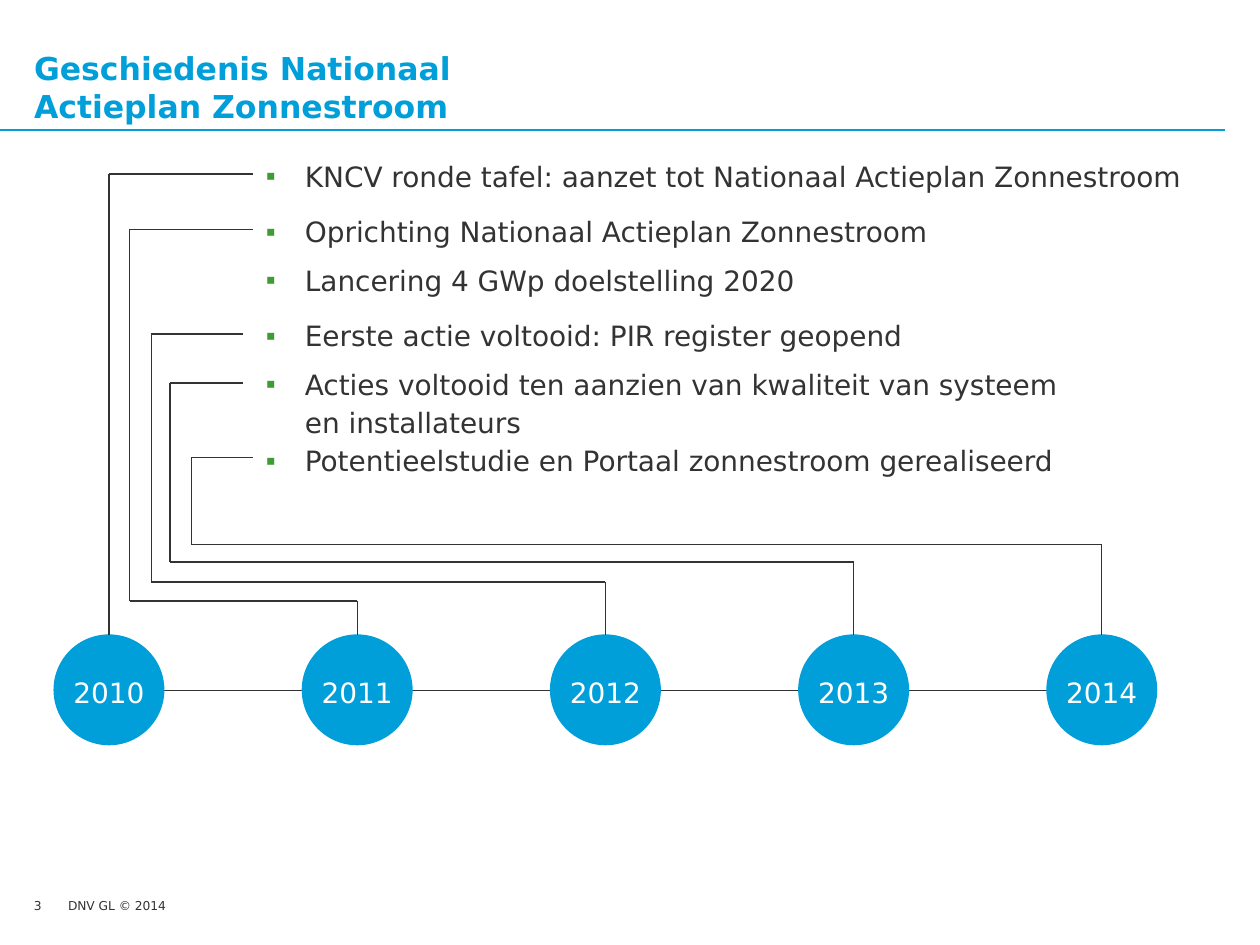
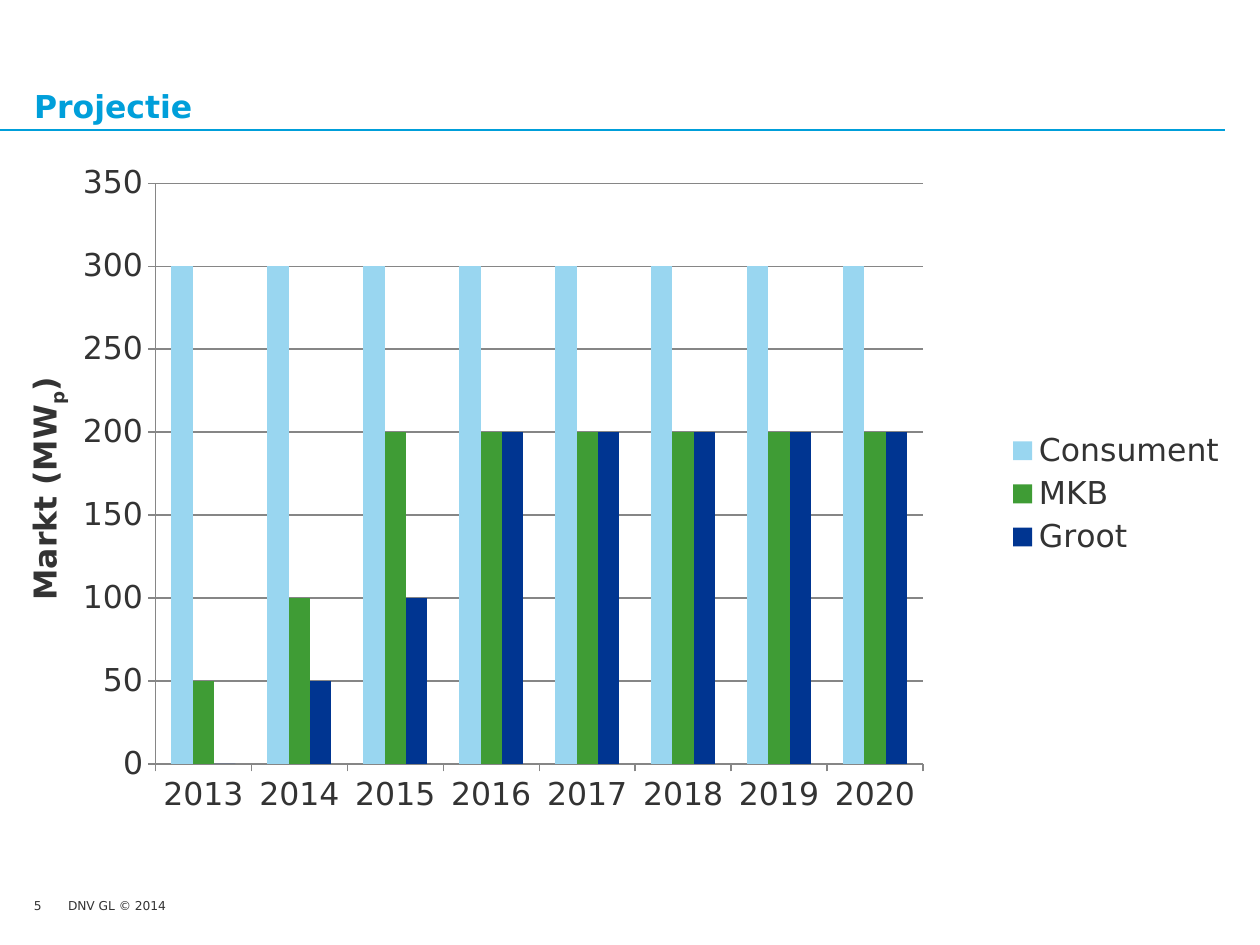
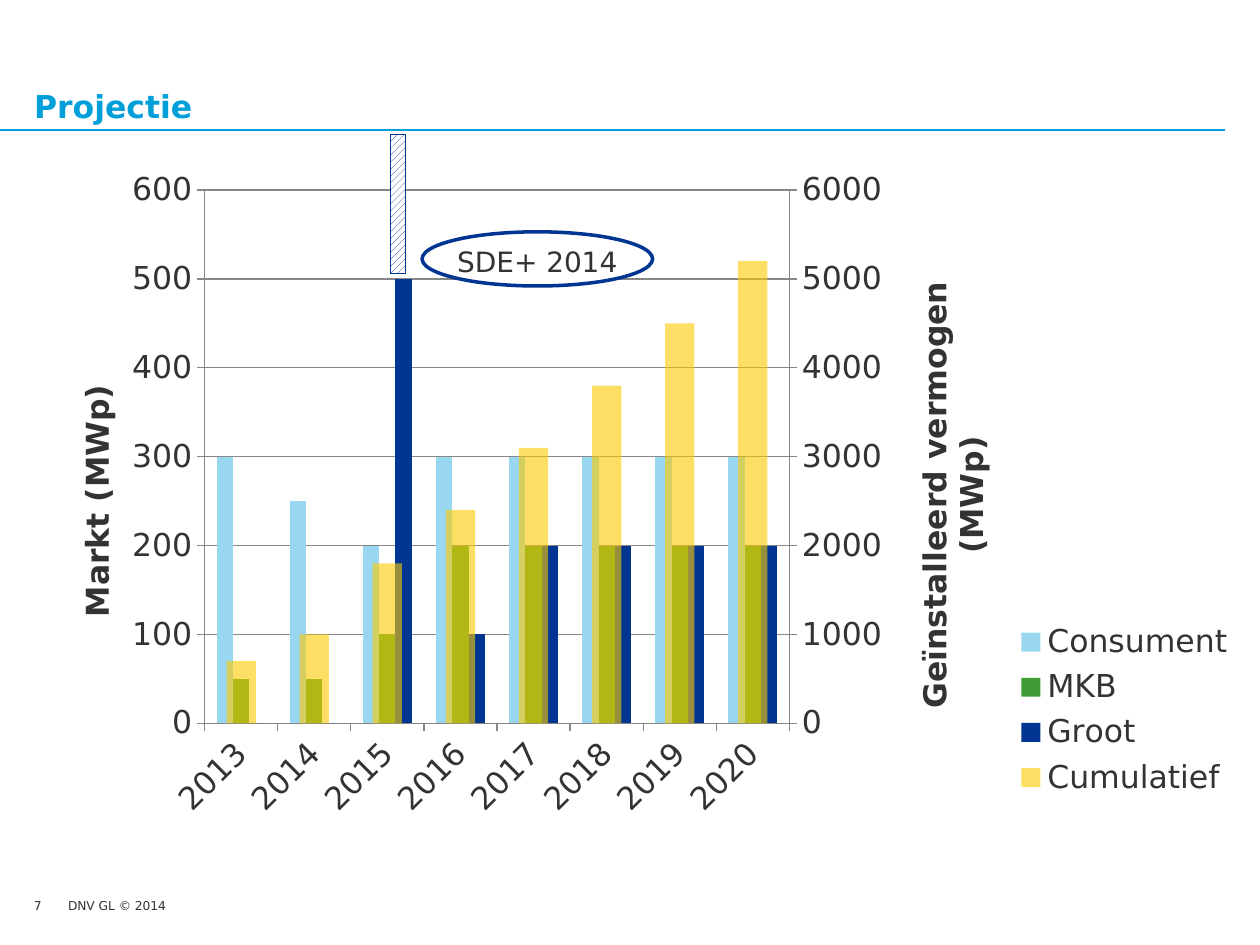
from copy import deepcopy

from lxml import etree
from pptx import Presentation
from pptx.chart.axis import ValueAxis
from pptx.chart.data import CategoryChartData
from pptx.dml.color import RGBColor
from pptx.enum.chart import XL_CHART_TYPE, XL_LEGEND_POSITION, XL_TICK_MARK
from pptx.enum.dml import MSO_PATTERN
from pptx.enum.shapes import MSO_CONNECTOR, MSO_SHAPE
from pptx.enum.text import MSO_ANCHOR, MSO_AUTO_SIZE, PP_ALIGN
from pptx.oxml.ns import qn
from pptx.util import Inches, Pt

COLUMNS = XL_CHART_TYPE.COLUMN_CLUSTERED
LEGEND_RIGHT = XL_LEGEND_POSITION.RIGHT
TICK_OUT, TICK_NONE = XL_TICK_MARK.OUTSIDE, XL_TICK_MARK.NONE
UP_DIAGONAL = MSO_PATTERN.WIDE_UPWARD_DIAGONAL
STRAIGHT = MSO_CONNECTOR.STRAIGHT
OVAL, RECTANGLE = MSO_SHAPE.OVAL, MSO_SHAPE.RECTANGLE
TOP, MIDDLE, BOTTOM = MSO_ANCHOR.TOP, MSO_ANCHOR.MIDDLE, MSO_ANCHOR.BOTTOM
NO_AUTOFIT = MSO_AUTO_SIZE.NONE
LEFT, CENTER = PP_ALIGN.LEFT, PP_ALIGN.CENTER

FONT = "DejaVu Sans"
LINE_SPACING = 1.13
COLORS = {
    "text": "333333", "white": "FFFFFF", "sky": "009FDA", "light": "99D6F0",
    "green": "3F9C35", "navy": "003591", "yellow": "FECB00", "axis": "868686",
}
YEARS = [str(year) for year in range(2013, 2021)]
SERIES_COLORS = ["light", "green", "navy", "yellow"]

DOT_SIZE, DOT_LEFT, DOT_TOP, DOT_STEP = 0.87, 0.43, 5.04, 1.97
MILESTONES = [
    ("2010", None, None, 1.38, 2.01),
    ("2011", 1.03, 4.77, 1.82, 2.01),
    ("2012", 1.2, 4.62, 2.65, 1.93),
    ("2013", 1.35, 4.46, 3.04, 1.93),
    ("2014", 1.52, 4.32, 3.63, 2.01),
]
EVENTS = [
    (0, "KNCV ronde tafel: aanzet tot Nationaal Actieplan Zonnestroom"),
    (10, "Oprichting Nationaal Actieplan Zonnestroom"),
    (6, "Lancering 4 GWp doelstelling 2020"),
    (10, "Eerste actie voltooid: PIR register geopend"),
    (6, "Acties voltooid ten aanzien van kwaliteit van systeem\nen installateurs"),
    (0.5, "Potentieelstudie en Portaal zonnestroom gerealiseerd"),
]


def color(name):
    """Return the named colour."""
    return RGBColor.from_string(COLORS[name])


def style_font(font, size, name="text", bold=False):
    """Set typeface, size, colour and weight of a font."""
    font.name, font.size, font.bold = FONT, Pt(size), bold
    font.color.rgb = color(name)


def add_text(para, text, size, name="text", bold=False):
    """Add text to a paragraph, one run for each line."""
    for index, line in enumerate(text.split("\n")):
        if index:
            para.add_line_break()
        span = para.add_run()
        span.text = line
        style_font(span.font, size, name, bold)


def prepare_frame(box, anchor=TOP, wrap=True):
    """Clear the margins of a text frame and return it."""
    frame = box.text_frame
    frame.margin_left = frame.margin_right = 0
    frame.margin_top = frame.margin_bottom = 0
    frame.vertical_anchor = anchor
    frame.auto_size = NO_AUTOFIT
    frame.word_wrap = wrap
    return frame


def move(box, left, top, width, height):
    """Place a shape on the page."""
    box.left, box.top = Inches(left), Inches(top)
    box.width, box.height = Inches(width), Inches(height)


def add_label(page, text, left, width):
    """Add a small footer label."""
    box = page.shapes.add_textbox(Inches(left), Inches(7.13), Inches(width), Inches(0.2))
    add_text(prepare_frame(box).paragraphs[0], text, 7)


def add_line(page, start, end, name="text", width=0.75):
    """Draw a straight line between two points."""
    line = page.shapes.add_connector(STRAIGHT, *(Inches(value) for value in start + end))
    line.line.color.rgb = color(name)
    line.line.width = Pt(width)
    etree.SubElement(line._element.spPr, qn("a:effectLst"))
    return line


def add_page(deck, layout, title, number):
    """Add a page with title, rule and footer."""
    page = deck.slides.add_slide(deck.slide_layouts[layout])
    add_label(page, "DNV GL © 2014", 0.54, 0.8)
    add_line(page, (0, 1.03), (9.72, 1.03), "sky", 1)
    move(page.shapes.title, 0.27, 0.26, 9.45, 0.73)
    para = prepare_frame(page.shapes.title, BOTTOM).paragraphs[0]
    para.alignment = LEFT
    add_text(para, title, 18, "sky", True)
    add_label(page, number, 0.27, 0.26)
    return page


def add_ellipse(page, text, place, fill, line, width, ink):
    """Add an ellipse with centred text."""
    shape = page.shapes.add_shape(OVAL, *(Inches(value) for value in place))
    shape.shadow.inherit = False
    shape.fill.solid()
    shape.fill.fore_color.rgb = color(fill)
    shape.line.color.rgb = color(line)
    shape.line.width = Pt(width)
    para = prepare_frame(shape, MIDDLE, False).paragraphs[0]
    para.alignment = CENTER
    para.line_spacing = LINE_SPACING
    add_text(para, text, 16, ink)
    return shape


def add_bullet(para):
    """Give a paragraph a green square bullet and a hanging indent."""
    props = para._p.get_or_add_pPr()
    props.set("marL", str(Inches(0.31)))
    props.set("indent", str(-Inches(0.31)))
    tint = etree.SubElement(props, qn("a:buClr"))
    etree.SubElement(tint, qn("a:srgbClr"), val=COLORS["green"])
    etree.SubElement(props, qn("a:buChar"), char="▪")


def fill_events(body):
    """Write the list of events."""
    move(body, 2.11, 1.23, 7.53, 2.6)
    frame = prepare_frame(body)
    for index, (space, text) in enumerate(EVENTS):
        para = frame.add_paragraph() if index else frame.paragraphs[0]
        add_bullet(para)
        para.alignment = LEFT
        para.line_spacing = LINE_SPACING
        para.space_before = Pt(space)
        add_text(para, text, 16)


def add_route(page, dot, center, trunk, lane, event_y, event_x):
    """Lead a line from a year to its event."""
    points = [(trunk or center, event_y), (event_x, event_y)]
    if lane:
        points = [(center, lane), (trunk, lane)] + points
    add_line(page, (center, DOT_TOP), points[0]).begin_connect(dot, 0)
    for start, end in zip(points, points[1:]):
        add_line(page, start, end)


def add_timeline(page):
    """Draw the years and their routes to the events."""
    add_line(page, (0.54, 5.48), (9.17, 5.48))
    for index, (year, *route) in enumerate(MILESTONES):
        left = DOT_LEFT + index * DOT_STEP
        place = (left, DOT_TOP, DOT_SIZE, DOT_SIZE)
        dot = add_ellipse(page, year, place, "sky", "sky", 0.75, "white")
        add_route(page, dot, left + DOT_SIZE / 2, *route)


def set_layout(parent, index, inner=False, **lengths):
    """Place a chart part by fractions of the chart area."""
    for old in parent.findall(qn("c:layout")):
        parent.remove(old)
    layout = etree.Element(qn("c:layout"))
    manual = etree.SubElement(layout, qn("c:manualLayout"))
    if inner:
        etree.SubElement(manual, qn("c:layoutTarget"), val="inner")
    for side in ("xMode", "yMode"):
        etree.SubElement(manual, qn("c:" + side), val="edge")
    for side, length in lengths.items():
        etree.SubElement(manual, qn("c:" + side), val=str(length))
    parent.insert(index, layout)


def style_axis(axis):
    """Set line and tick marks of an axis."""
    axis.format.line.color.rgb = color("axis")
    axis.format.line.width = Pt(0.75)
    axis.major_tick_mark = TICK_OUT
    axis.minor_tick_mark = TICK_NONE
    style_font(axis.tick_labels.font, 18)


def style_value_axis(axis, step, top, lines, place=None):
    """Set scale and upright title of a value axis."""
    style_axis(axis)
    axis.minimum_scale, axis.maximum_scale, axis.major_unit = 0, top, step
    frame = axis.axis_title.text_frame
    frame._txBody.bodyPr.set("rot", "-5400000")
    frame._txBody.bodyPr.set("vert", "horz")
    for index, spans in enumerate(lines):
        para = frame.add_paragraph() if index else frame.paragraphs[0]
        for span in spans:
            add_text(para, span, 18, bold=True)
    if place:
        set_layout(axis.axis_title._element, 1, x=place[0], y=place[1])


def add_market_chart(page, left, series):
    """Add a clustered column chart of the market per year."""
    data = CategoryChartData()
    data.categories = YEARS
    for name, values in series:
        data.add_series(name, values)
    frame = page.shapes.add_chart(
        COLUMNS, Inches(left), Inches(1.24), Inches(9.67), Inches(5.36), data)
    chart = frame.chart
    chart.has_title = False
    style_font(chart.font, 18)
    chart.has_legend = True
    chart.legend.position = LEGEND_RIGHT
    chart.legend.include_in_layout = False
    style_font(chart.legend.font, 18)
    plot = chart.plots[0]
    plot.gap_width, plot.overlap, plot.vary_by_categories = 150, 0, False
    for column, name in zip(plot.series, SERIES_COLORS):
        column.format.fill.solid()
        column.format.fill.fore_color.rgb = color(name)
        column.invert_if_negative = False
    style_axis(chart.category_axis)
    grid = chart.value_axis.major_gridlines.format.line
    grid.color.rgb = color("axis")
    grid.width = Pt(0.75)
    return chart


def move_last_to_right_axis(chart):
    """Plot the last series on a second value axis and return that axis."""
    area = chart._chartSpace.chart.plotArea
    bars = area.find(qn("c:barChart"))
    parts = [bars, area.find(qn("c:catAx")), area.find(qn("c:valAx"))]
    right_bars, right_cat, right_val = copies = [deepcopy(part) for part in parts]
    for part in copies:
        for link in part.iter(qn("c:axId"), qn("c:crossAx")):
            link.set("val", str(int(link.get("val")) + 1))
    bars.remove(bars.findall(qn("c:ser"))[-1])
    for column in right_bars.findall(qn("c:ser"))[:-1]:
        right_bars.remove(column)
    bars.addnext(right_bars)
    parts[2].addnext(right_val)
    right_val.addnext(right_cat)
    right_cat.find(qn("c:delete")).set("val", "1")
    right_val.find(qn("c:axPos")).set("val", "r")
    right_val.find(qn("c:crosses")).set("val", "max")
    tint = right_bars.find(qn("c:ser")).find(".//" + qn("a:srgbClr"))
    etree.SubElement(tint, qn("a:alpha"), val="60000")
    axis = ValueAxis(right_val)
    axis.has_major_gridlines = False
    axis.has_title = False
    return axis


def add_hatched_bar(page):
    """Extend the 2015 column with a hatched bar."""
    bar = page.shapes.add_shape(
        RECTANGLE, Inches(3.1), Inches(1.07), Inches(0.12), Inches(1.1))
    bar.shadow.inherit = False
    bar.fill.patterned()
    bar.fill.pattern = UP_DIAGONAL
    bar.fill.fore_color.rgb = color("navy")
    bar.fill.back_color.rgb = color("white")
    bar.line.color.rgb = color("navy")
    bar.line.width = Pt(0.75)


def build_history(deck):
    """Build the history page."""
    page = add_page(deck, 1, "Geschiedenis Nationaal\nActieplan Zonnestroom", "3")
    fill_events(page.placeholders[1])
    add_timeline(page)


def build_projection(deck):
    """Build the projection page."""
    page = add_page(deck, 5, "Projectie", "5")
    chart = add_market_chart(page, 0.17, [
        ("Consument", [300] * 8),
        ("MKB", [50, 100] + [200] * 6),
        ("Groot", [0, 50, 100] + [200] * 5),
    ])
    style_value_axis(chart.value_axis, 50, 350, [["Markt (MW", "p", ")"]])
    subscript = chart.value_axis.axis_title.text_frame.paragraphs[0].runs[1]
    subscript.font._element.set("baseline", "-25000")
    set_layout(chart._chartSpace.chart.plotArea, 0, True, x=0.11, y=0.04, w=0.63, h=0.86)


def build_cumulative(deck):
    """Build the projection page with installed capacity."""
    page = add_page(deck, 5, "Projectie", "7")
    chart = add_market_chart(page, 0.27, [
        ("Consument", [300, 250, 200] + [300] * 5),
        ("MKB", [50, 50, 100] + [200] * 5),
        ("Groot", [0, 0, 500, 100] + [200] * 4),
        ("Cumulatief", [700, 1000, 1800, 2400, 3100, 3800, 4500, 5200]),
    ])
    style_value_axis(chart.value_axis, 100, 600, [["Markt (MWp)"]], (0.03, 0.33))
    right_axis = move_last_to_right_axis(chart)
    style_value_axis(right_axis, 1000, 6000,
                     [["Geïnstalleerd vermogen"], ["(MWp)"]], (0.72, 0.18))
    labels = chart.category_axis._element.find(qn("c:txPr"))
    labels.find(qn("a:bodyPr")).set("rot", "-2700000")
    set_layout(chart._chartSpace.chart.plotArea, 0, True, x=0.14, y=0.05, w=0.48, h=0.79)
    set_layout(chart.legend._element, 1, x=0.8, y=0.68, w=0.19, h=0.28)
    add_ellipse(page, "SDE+ 2014", (3.35, 1.84, 1.83, 0.43), "white", "navy", 2, "text")
    add_hatched_bar(page)


def main():
    """Build the deck."""
    deck = Presentation()
    deck.slide_width, deck.slide_height = Inches(10), Inches(7.5)
    build_history(deck)
    build_projection(deck)
    build_cumulative(deck)
    deck.save("out.pptx")


if __name__ == "__main__":
    main()
